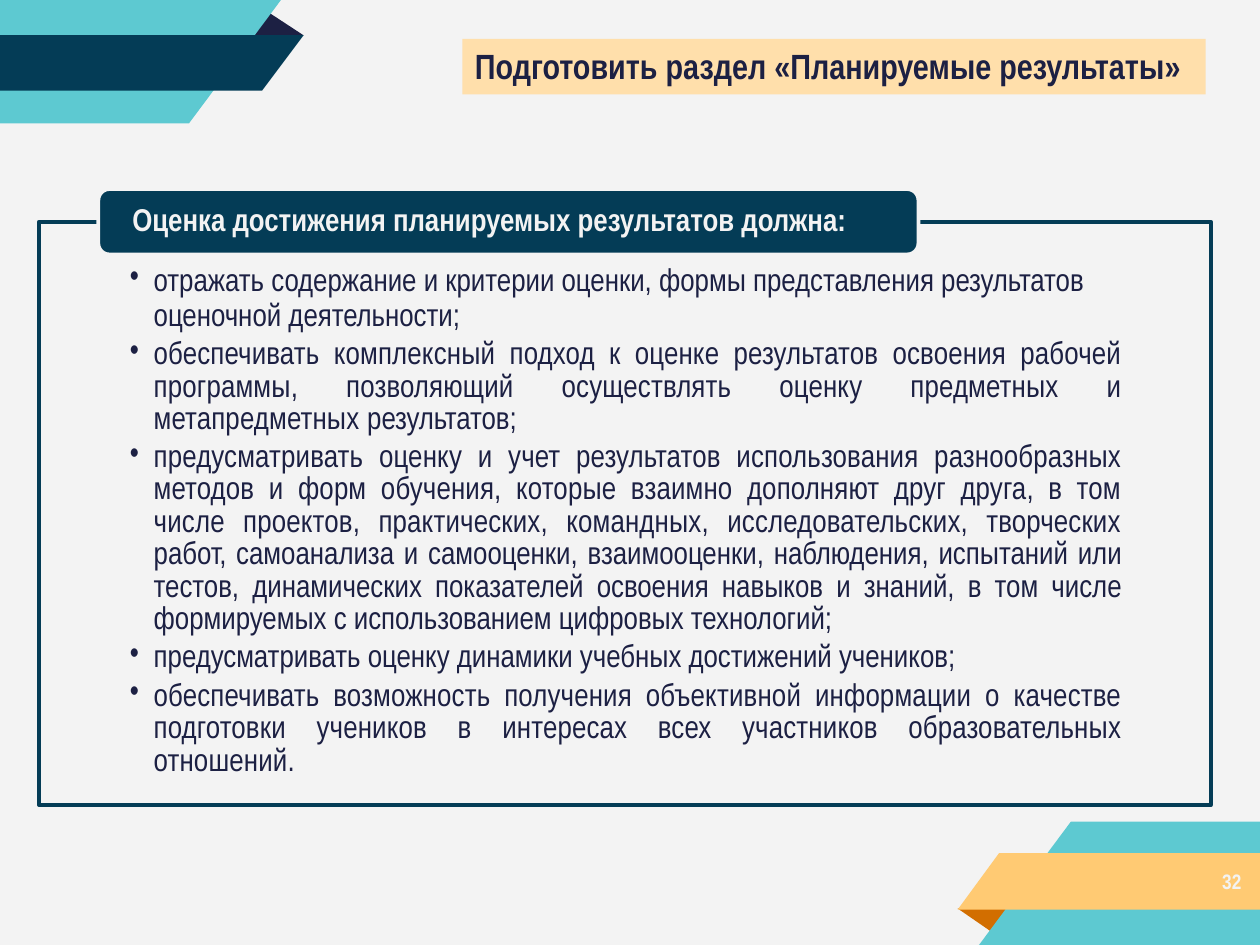
"""Build the slide on assessing planned learning results."""
from lxml import etree
from pptx import Presentation
from pptx.dml.color import RGBColor
from pptx.enum.shapes import MSO_SHAPE
from pptx.enum.text import MSO_ANCHOR, PP_ALIGN
from pptx.oxml.ns import qn
from pptx.util import Inches, Pt

RECT, ROUNDED = MSO_SHAPE.RECTANGLE, MSO_SHAPE.ROUNDED_RECTANGLE
LEFT, JUSTIFY, TOP = PP_ALIGN.LEFT, PP_ALIGN.JUSTIFY, MSO_ANCHOR.TOP
PAPER = RGBColor(0xF3, 0xF3, 0xF3)
NAVY = RGBColor(0x04, 0x3C, 0x56)
INK = RGBColor(0x1C, 0x20, 0x43)
TEAL = RGBColor(0x5D, 0xC9, 0xD1)
AMBER = RGBColor(0xFF, 0xCA, 0x73)
RUST = RGBColor(0xD2, 0x6E, 0x00)
CREAM = RGBColor(0xFF, 0xDF, 0xAB)
FONT = "Arial Narrow"
WIDTH, HEIGHT = 10, 7.5
HANG = 0.19
NORMAL, LOOSE = 0, 10

RIBBONS = [
    (INK, [(2.12, 0.09), (1.98, 0.28), (2.41, 0.28)]),
    (TEAL, [(0, 0), (2.23, 0), (1.5, 0.98), (0, 0.98)]),
    (NAVY, [(0, 0.28), (2.41, 0.28), (2.08, 0.72), (0, 0.72)]),
    (RUST, [(8.03, 7.21), (7.6, 7.21), (7.89, 7.41)]),
    (TEAL, [(WIDTH, 6.52), (8.5, 6.52), (7.77, HEIGHT), (WIDTH, HEIGHT)]),
    (AMBER, [(WIDTH, 6.77), (7.93, 6.77), (7.6, 7.22), (WIDTH, 7.22)]),
]
TITLE = [("Подготовить раздел «Планируемые результаты»", NORMAL)]
HEADING = [("Оценка достижения планируемых результатов должна:", NORMAL)]
PAGE_NUMBER = [("32", NORMAL)]
CRITERIA = [
    ([("отражать содержание и критерии оценки, формы представления результатов",
       NORMAL)], True, 13.9, Pt(20.1)),
    ([("оценочной деятельности;", NORMAL)], False, 0, Pt(20.1)),
    ([("обеспечивать комплексный подход к оценке результатов освоения рабочей "
       "программы, позволяющий осуществлять оценку предметных и "
       "метапредметных ", LOOSE), ("результатов;", NORMAL)], True, 3.2, Pt(18.6)),
    ([("предусматривать оценку и учет результатов использования разнообразных "
       "методов и форм обучения, которые взаимно дополняют друг друга, в том "
       "числе проектов, практических, командных, исследовательских, творческих ",
       LOOSE),
      ("работ, самоанализа и самооценки, взаимооценки, наблюдения, испытаний или "
       "тестов, динамических показателей освоения навыков и знаний, в том числе "
       "формируемых с использованием цифровых технологий;", NORMAL)],
     True, 3, 0.86),
    ([("предусматривать оценку динамики учебных достижений учеников;", NORMAL)],
     True, 0.1, 1.0),
    ([("обеспечивать возможность получения объективной информации о качестве "
       "подготовки учеников в интересах всех участников образовательных "
       "отношений.", LOOSE)], True, 3.2, Pt(18.6)),
]


def paint(shape, fill, line=None):
    shape.shadow.inherit = False
    shape.fill.solid()
    shape.fill.fore_color.rgb = fill
    if line is None:
        shape.line.fill.background()
    else:
        shape.line.color.rgb = line
        shape.line.width = Pt(2.25)


def add_ribbon(page, color, points):
    corners = [(Inches(x), Inches(y)) for x, y in points]
    builder = page.shapes.build_freeform(*corners[0])
    builder.add_line_segments(corners[1:], close=True)
    paint(builder.convert_to_shape(), color)


def add_block(page, kind, place, fill, line=None):
    block = page.shapes.add_shape(kind, *map(Inches, place))
    paint(block, fill, line)
    return block


def prepare_frame(shape, top=0):
    frame = shape.text_frame
    frame.word_wrap = True
    frame.vertical_anchor = TOP
    frame.margin_left = frame.margin_right = frame.margin_bottom = 0
    frame.margin_top = Inches(top)
    return frame


def write(para, pieces, size, color, bold, indent, before, align=LEFT):
    para.alignment = align
    para.space_before = Pt(before)
    para._p.get_or_add_pPr().set("marL", str(Inches(indent)))
    for text, tracking in pieces:
        span = para.add_run()
        span.text = text
        font = span.font
        font.name, font.size, font.bold = FONT, Pt(size), bold
        font.color.rgb = color
        span._r.get_or_add_rPr().set("spc", str(tracking))


def add_bullet(para):
    properties = para._p.get_or_add_pPr()
    properties.set("indent", str(-Inches(HANG)))
    etree.SubElement(properties, qn("a:buFont")).set("typeface", FONT)
    etree.SubElement(properties, qn("a:buChar")).set("char", "•")


def add_text_box(page, place, top=0):
    return prepare_frame(page.shapes.add_textbox(*map(Inches, place)), top)


def main():
    deck = Presentation()
    deck.slide_width, deck.slide_height = Inches(WIDTH), Inches(HEIGHT)
    page = deck.slides.add_slide(deck.slide_layouts[6])
    page.background.fill.solid()
    page.background.fill.fore_color.rgb = PAPER

    for color, points in RIBBONS:
        add_ribbon(page, color, points)
    add_block(page, RECT, (0.31, 1.76, 9.3, 4.63), PAPER, NAVY)
    heading = add_block(page, ROUNDED, (0.78, 1.5, 6.51, 0.52), NAVY, PAPER)
    heading.adjustments[0] = 0.17

    frame = add_text_box(page, (1.02, 1.57, 7.89, 4.61), 0.02)
    write(frame.paragraphs[0], HEADING, 18, PAPER, True, 0.03, 1)
    for pieces, bulleted, before, spacing in CRITERIA:
        para = frame.add_paragraph()
        write(para, pieces, 18, INK, False, 0.2, before, JUSTIFY)
        para.line_spacing = spacing
        if bulleted:
            add_bullet(para)

    number = add_text_box(page, (9.66, 6.89, 0.25, 0.22))
    write(number.paragraphs[0], PAGE_NUMBER, 12, PAPER, True, 0.04, 0.2)
    banner = add_block(page, RECT, (3.67, 0.31, 5.9, 0.44), CREAM)
    write(prepare_frame(banner, 0.04).paragraphs[0], TITLE, 20, INK, True, 0.1, 3.2)
    deck.save("out.pptx")


if __name__ == "__main__":
    main()
